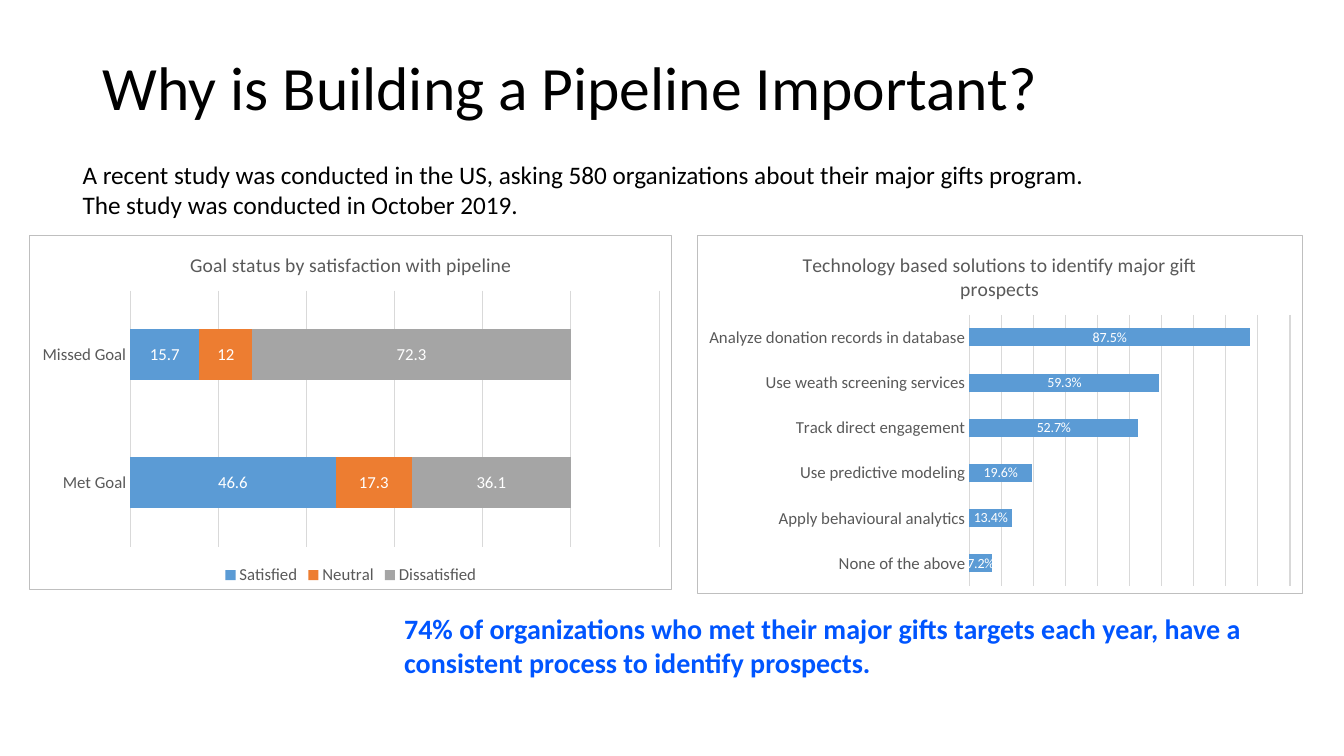
from lxml import etree
from pptx import Presentation
from pptx.chart.data import CategoryChartData
from pptx.dml.color import RGBColor
from pptx.enum.chart import XL_CHART_TYPE, XL_LEGEND_POSITION, XL_TICK_MARK
from pptx.enum.text import MSO_ANCHOR
from pptx.util import Inches, Pt

BAR_STACKED = XL_CHART_TYPE.BAR_STACKED
LEGEND_BOTTOM = XL_LEGEND_POSITION.BOTTOM
NO_TICK = XL_TICK_MARK.NONE
MIDDLE, TOP = MSO_ANCHOR.MIDDLE, MSO_ANCHOR.TOP

BLACK = RGBColor(0x00, 0x00, 0x00)
WHITE = RGBColor(0xFF, 0xFF, 0xFF)
GREY_TEXT = RGBColor(0x59, 0x59, 0x59)
GRID = RGBColor(0xD9, 0xD9, 0xD9)
BRIGHT_BLUE = RGBColor(0x00, 0x55, 0xFF)
BLUE = RGBColor(0x5B, 0x9B, 0xD5)
ORANGE = RGBColor(0xED, 0x7D, 0x31)
GREY = RGBColor(0xA5, 0xA5, 0xA5)
FONT = "Calibri"

CHART_FRAME = (
    '<c:spPr xmlns:c="http://schemas.openxmlformats.org/drawingml/2006/chart" '
    'xmlns:a="http://schemas.openxmlformats.org/drawingml/2006/main">'
    '<a:solidFill><a:srgbClr val="FFFFFF"/></a:solidFill>'
    '<a:ln w="9525"><a:solidFill><a:srgbClr val="BFBFBF"/></a:solidFill></a:ln>'
    '</c:spPr>'
)


def style_font(font, size, color, bold=False):
    font.name = FONT
    font.size = Pt(size)
    font.bold = bold
    font.color.rgb = color


def add_bar_chart(box, title, categories, series, number_format, label_size, maximum, step):
    data = CategoryChartData(number_format=number_format)
    data.categories = categories
    for name, values, color in series:
        data.add_series(name, values)
    chart = slide.shapes.add_chart(BAR_STACKED, *map(Inches, box), data).chart
    style_font(chart.font, 10, BLACK)
    chart._chartSpace.chart.addnext(etree.fromstring(CHART_FRAME))

    chart.has_title = True
    chart.chart_title.include_in_layout = False
    heading = chart.chart_title.text_frame
    heading.text = title
    style_font(heading.paragraphs[0].runs[0].font, 14, GREY_TEXT)

    category_axis = chart.category_axis
    category_axis.major_tick_mark = NO_TICK
    category_axis.minor_tick_mark = NO_TICK
    category_axis.format.line.color.rgb = GRID
    category_axis.format.line.width = Pt(0.75)
    style_font(category_axis.tick_labels.font, 12, GREY_TEXT)

    value_axis = chart.value_axis
    value_axis.visible = False
    value_axis.minimum_scale = 0
    value_axis.maximum_scale = maximum
    value_axis.major_unit = step
    value_axis.has_major_gridlines = True
    value_axis.major_gridlines.format.line.color.rgb = GRID
    value_axis.major_gridlines.format.line.width = Pt(0.75)

    plot = chart.plots[0]
    plot.gap_width = 150
    plot.overlap = 100
    plot.vary_by_categories = False
    for bars, (name, values, color) in zip(plot.series, series):
        bars.format.fill.solid()
        bars.format.fill.fore_color.rgb = color
        labels = bars.data_labels
        labels.show_value = True
        labels.number_format = number_format
        labels.number_format_is_linked = False
        style_font(labels.font, label_size, WHITE)
    return chart


prs = Presentation()
prs.slide_width = Inches(13.33)
prs.slide_height = Inches(7.5)
slide = prs.slides.add_slide(prs.slide_layouts[6])

satisfaction = add_bar_chart(
    (0.29, 2.33, 6.38, 3.52),
    "Goal status by satisfaction with pipeline",
    ["Met Goal", "Missed Goal"],
    [
        ("Satisfied", (46.6, 15.7), BLUE),
        ("Neutral", (17.3, 12), ORANGE),
        ("Dissatisfied", (36.1, 72.3), GREY),
    ],
    "General", 12, 120, 20,
)
satisfaction.has_legend = True
satisfaction.legend.position = LEGEND_BOTTOM
satisfaction.legend.include_in_layout = False
style_font(satisfaction.legend.font, 12, GREY_TEXT)

technology = add_bar_chart(
    (6.91, 2.33, 6.01, 3.56),
    "Technology based solutions to identify major gift prospects",
    [
        "Analyze donation records in database",
        "Use weath screening services",
        "Track direct engagement",
        "Use predictive modeling",
        "Apply behavioural analytics",
        "None of the above",
    ],
    [("Series 1", (0.875, 0.593, 0.527, 0.196, 0.134, 0.072), BLUE)],
    "0.0%", 10, 1, 0.1,
)
technology.has_legend = False
technology.category_axis.reverse_order = True

texts = [
    ((0.72, 1.53, 11.95, 0.71),
     "A recent study was conducted in the US, asking 580 organizations about their major gifts program.\n"
     "The study was conducted in October 2019.",
     18, BLACK, False, TOP, 1.0),
    ((3.91, 6.02, 8.55, 0.77),
     "74% of organizations who met their major gifts targets each year, "
     "have a consistent process to identify prospects.",
     20, BRIGHT_BLUE, True, TOP, 1.0),
    ((0.92, 0.43, 11.99, 0.93),
     "Why is Building a Pipeline Important?",
     44, BLACK, False, MIDDLE, 0.9),
]
for box, words, size, color, bold, anchor, spacing in texts:
    frame = slide.shapes.add_textbox(*map(Inches, box)).text_frame
    frame.word_wrap = True
    frame.vertical_anchor = anchor
    frame.text = words
    for paragraph in frame.paragraphs:
        paragraph.line_spacing = spacing
        style_font(paragraph.runs[0].font, size, color, bold)

prs.save("out.pptx")
